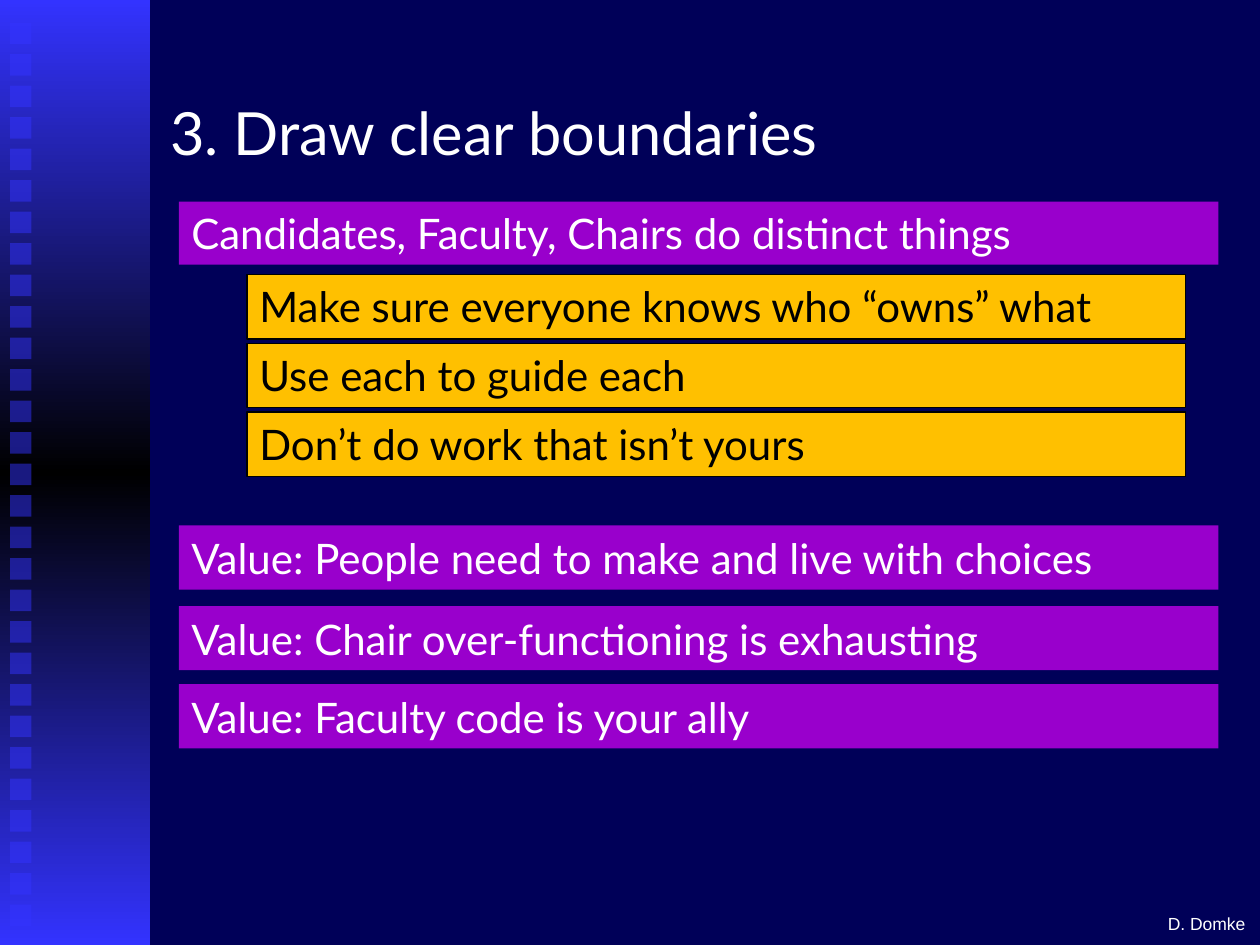
import copy

import pptx
import pptx.dml.color
import pptx.enum.shapes
import pptx.enum.text
import pptx.oxml
import pptx.oxml.ns
import pptx.util
from pptx.util import Inches

RGBColor = pptx.dml.color.RGBColor
NAVY = RGBColor(0x00, 0x00, 0x58)
BLUE = RGBColor(0x33, 0x33, 0xFF)
PURPLE = RGBColor(0x99, 0x00, 0xCC)
AMBER = RGBColor(0xFF, 0xC0, 0x00)
BLACK = RGBColor(0x00, 0x00, 0x00)
WHITE = RGBColor(0xFF, 0xFF, 0xFF)

MIDDLE = pptx.enum.text.MSO_ANCHOR.MIDDLE
TOP = pptx.enum.text.MSO_ANCHOR.TOP


def add_rectangle(shapes, left, top, width, height, color):
    shape = shapes.add_shape(
        pptx.enum.shapes.MSO_SHAPE.RECTANGLE,
        Inches(left), Inches(top), Inches(width), Inches(height))
    shape.shadow.inherit = False
    shape.fill.solid()
    shape.fill.fore_color.rgb = color
    shape.line.fill.background()
    return shape


def write_text(shape, text, size, color, font="Lato", anchor=MIDDLE):
    frame = shape.text_frame
    frame.word_wrap = True
    frame.auto_size = pptx.enum.text.MSO_AUTO_SIZE.NONE
    frame.vertical_anchor = anchor
    paragraph = frame.paragraphs[0]
    paragraph.alignment = pptx.enum.text.PP_ALIGN.LEFT
    run = paragraph.add_run()
    run.text = text
    run.font.name = font
    run.font.size = pptx.util.Pt(size)
    run.font.color.rgb = color


def add_side_band(slide, left, top, width, height):
    group = slide.shapes.add_group_shape()

    # Vertical gradient: blue, black, blue
    band = add_rectangle(group.shapes, left, top, width, height, BLUE)
    band.fill.gradient()
    band.fill.gradient_angle = 270
    first_stop = band._element.spPr.find(".//" + pptx.oxml.ns.qn("a:gs"))
    first_stop.addnext(copy.deepcopy(first_stop))
    stops = zip(band.fill.gradient_stops, (0, 0.5, 1), (BLUE, BLACK, BLUE))
    for stop, position, color in stops:
        stop.position = position
        stop.color.rgb = color

    # Column of half-transparent squares
    for index in range(29):
        square = add_rectangle(group.shapes, left + 0.08,
                               top + 0.18 + 0.25 * index, 0.17, 0.17, BLUE)
        color_element = square._element.spPr.find(
            ".//" + pptx.oxml.ns.qn("a:srgbClr"))
        color_element.append(pptx.oxml.parse_xml(
            f'<a:alpha {pptx.oxml.ns.nsdecls("a")} val="50000"/>'))


def place_title(slide, left, top, width, height):
    title = slide.shapes.title
    title.left, title.top = Inches(left), Inches(top)
    title.width, title.height = Inches(width), Inches(height)
    write_text(title, "3. Draw clear boundaries", 34, WHITE)


def add_statement(slide, left, top, width, height, text):
    bar = add_rectangle(slide.shapes, left, top, width, height, PURPLE)
    write_text(bar, text, 24, WHITE)


def add_details(slide, left, top, width, height, texts):
    bar_height = 0.51
    pitch = (height - bar_height) / (len(texts) - 1)
    for index, text in enumerate(texts):
        bar = add_rectangle(slide.shapes, left, top + index * pitch,
                            width, bar_height, AMBER)
        bar.line.color.rgb = BLACK
        bar.line.width = pptx.util.Pt(0.75)
        write_text(bar, text, 24, BLACK, anchor=TOP)


def add_credit(slide, left, top, width, height):
    box = slide.shapes.add_textbox(
        Inches(left), Inches(top), Inches(width), Inches(height))
    write_text(box, "D. Domke", 10, WHITE, font="Arial", anchor=TOP)


def main():
    presentation = pptx.Presentation()
    presentation.slide_width = Inches(10)
    presentation.slide_height = Inches(7.5)
    slide = presentation.slides.add_slide(presentation.slide_layouts[5])
    slide.background.fill.solid()
    slide.background.fill.fore_color.rgb = NAVY

    add_side_band(slide, 0, 0, 1.19, 7.5)
    place_title(slide, 1.25, 0.42, 8.75, 1.25)

    # Main point with its details
    add_statement(slide, 1.42, 1.6, 8.25, 0.5,
                  "Candidates, Faculty, Chairs do distinct things")
    add_details(slide, 1.96, 2.18, 7.45, 1.6, [
        "Make sure everyone knows who “owns” what",
        "Use each to guide each",
        "Don’t do work that isn’t yours",
    ])

    # Values
    for top, text in [
        (4.17, "Value: People need to make and live with choices"),
        (4.81, "Value: Chair over-functioning is exhausting"),
        (5.43, "Value: Faculty code is your ally"),
    ]:
        add_statement(slide, 1.42, top, 8.25, 0.51, text)

    add_credit(slide, 9.17, 7.2, 0.83, 0.27)
    presentation.save("out.pptx")


if __name__ == "__main__":
    main()
